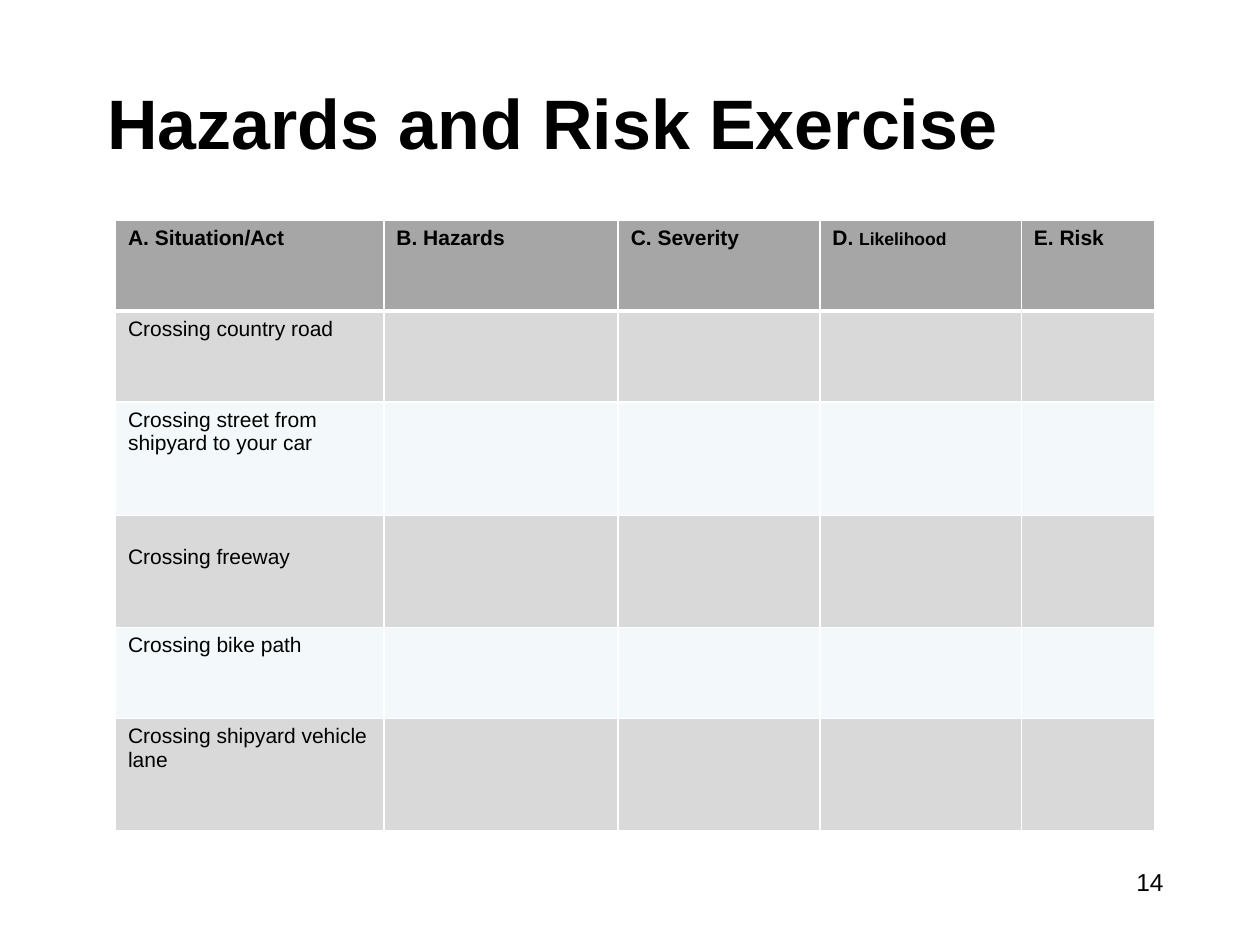
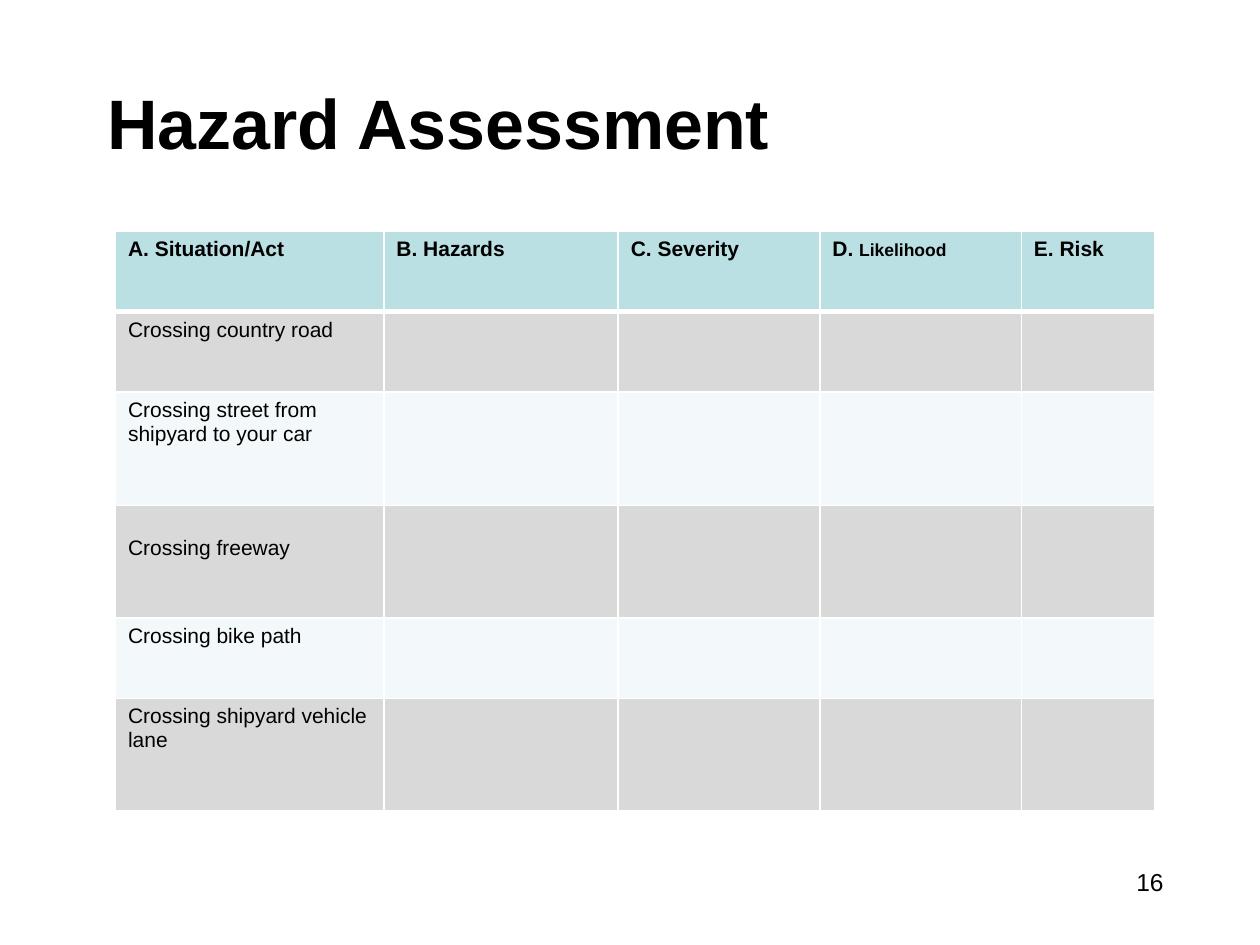
from lxml import etree
from pptx import Presentation
from pptx import util as u
from pptx.dml.color import RGBColor
from pptx.enum import text
from pptx.oxml import ns

deck = Presentation()
deck.slide_width, deck.slide_height = u.Inches(10), u.Inches(7.5)
unit = deck.slide_width / 120

INK, WHITE, GREY, MIST = "000000", "FFFFFF", "D9D9D9", "F3F9FA"
TITLE = {"name": "Arial", "size": u.Pt(40), "bold": True}
HEADING = {"name": "Arial", "size": u.Pt(12), "bold": True}
SMALL_HEADING = {**HEADING, "size": u.Pt(10)}
SITUATION = {**HEADING, "bold": False}
PAGE = {"name": "Arial", "size": u.Pt(14), "bold": False}

headings = [["A. Situation/Act"], ["B. Hazards"], ["C. Severity"],
            ["D. ", "Likelihood"], ["E. Risk"]]
situations = ["Crossing country road", "Crossing street from shipyard to your car",
              "Crossing freeway", "Crossing bike path", "Crossing shipyard vehicle lane"]
column_widths = [25.56, 22.32, 19.2, 19.2, 12.72]
pages = [
    {"title": "Hazards and Risk Exercise", "number": "14", "header": "A6A6A6", "top": 21, "low": 8.64},
    {"title": "Hazard Assessment", "number": "16", "header": "BBE0E3", "top": 22, "low": 7.68},
]


def grid(*cells):
    return [u.Emu(round(cell * unit)) for cell in cells]


def write(paragraph, words, style):
    run = paragraph.add_run()
    run.text = words
    for key, value in style.items():
        setattr(run.font, key, value)
    run.font.color.rgb = RGBColor.from_string(INK)


for page in pages:
    slide = deck.slides.add_slide(deck.slide_layouts[5])
    title = slide.shapes.title
    title.left, title.top, title.width, title.height = grid(9, 4.1, 102, 15)
    title.text_frame.vertical_anchor = text.MSO_ANCHOR.MIDDLE
    title.text_frame.paragraphs[0].alignment = text.PP_ALIGN.LEFT
    write(title.text_frame.paragraphs[0], page["title"], TITLE)

    row_heights = [page["low"], page["low"], 10.8, 10.7, page["low"], 10.7]
    table = slide.shapes.add_table(
        len(row_heights), len(column_widths),
        *grid(11, page["top"], sum(column_widths), sum(row_heights))).table
    for column, width in zip(table.columns, grid(*column_widths)):
        column.width = width
    for row, height in zip(table.rows, grid(*row_heights)):
        row.height = height

    for row_no, row in enumerate(table.rows):
        for cell in row.cells:
            properties = cell._tc.get_or_add_tcPr()
            for side in "LRTB":
                heavy = (row_no, side) in [(0, "B"), (1, "T")]
                border = etree.SubElement(properties, ns.qn(f"a:ln{side}"),
                                          w=str(u.Pt(3 if heavy else 1)))
                paint = etree.SubElement(border, ns.qn("a:solidFill"))
                etree.SubElement(paint, ns.qn("a:srgbClr"), val=WHITE)
            cell.fill.solid()
            band = page["header"] if row_no == 0 else GREY if row_no % 2 else MIST
            cell.fill.fore_color.rgb = RGBColor.from_string(band)

    for column_no, parts in enumerate(headings):
        paragraph = table.cell(0, column_no).text_frame.paragraphs[0]
        for words, style in zip(parts, [HEADING, SMALL_HEADING]):
            write(paragraph, words, style)
    for row_no, situation in enumerate(situations, 1):
        write(table.cell(row_no, 0).text_frame.paragraphs[0], situation, SITUATION)
    table.cell(3, 0).margin_top = grid(2.9)[0]

    number = slide.shapes.add_textbox(*grid(86, 82, 26, 6.25)).text_frame
    number.word_wrap = True
    number.paragraphs[0].alignment = text.PP_ALIGN.RIGHT
    write(number.paragraphs[0], page["number"], PAGE)

deck.save("out.pptx")
